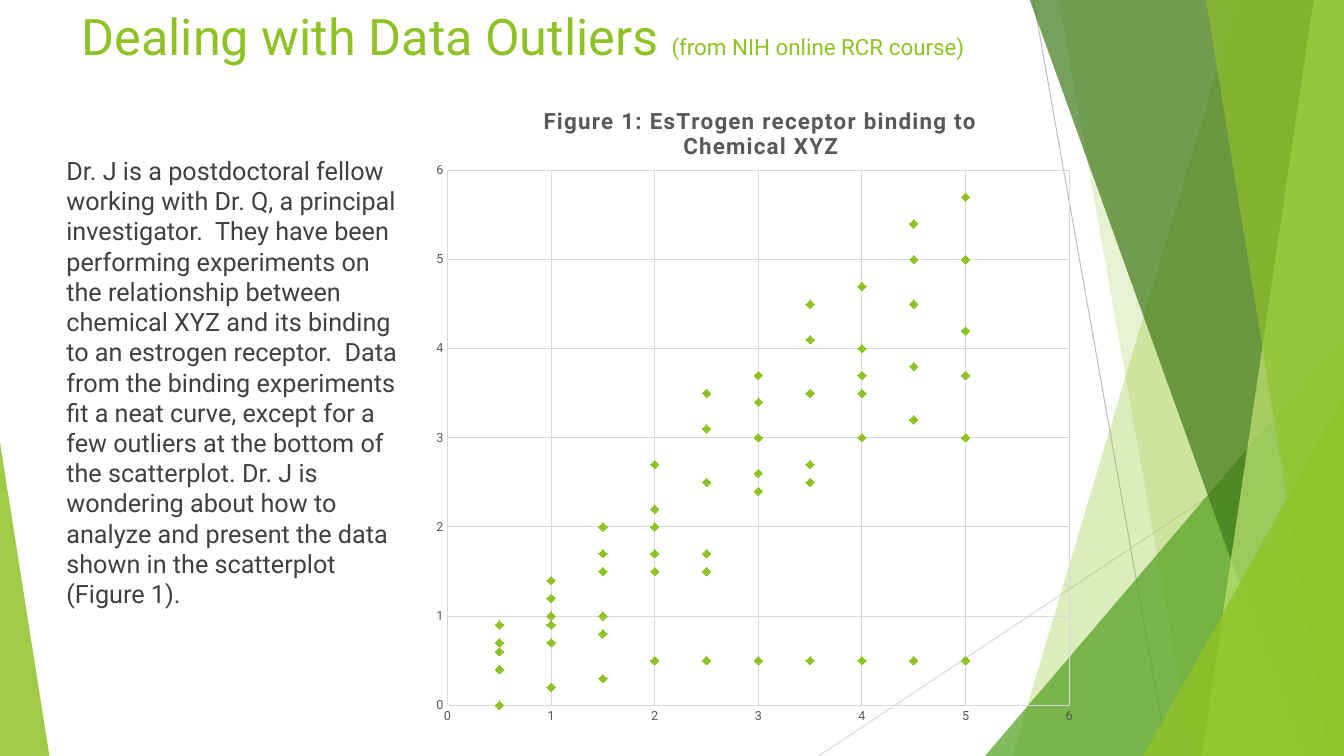
"""Build a slide on data outliers with a scatterplot and green facets."""
from dataclasses import dataclass

from lxml import etree
from pptx import Presentation
from pptx.chart.data import XyChartData
from pptx.dml.color import RGBColor
from pptx.enum.chart import XL_CHART_TYPE as ChartType
from pptx.enum.chart import XL_MARKER_STYLE as Marker
from pptx.enum.chart import XL_TICK_MARK as Tick
from pptx.enum.shapes import MSO_CONNECTOR as Connector
from pptx.enum.shapes import MSO_SHAPE as Shape
from pptx.oxml import parse_xml
from pptx.oxml.ns import nsdecls, qn
from pptx.util import Inches, Pt


@dataclass(frozen=True)
class Theme:
    font: str = "Roboto"
    green: str = "90C226"
    leaf: str = "54A021"
    forest: str = "3F7819"
    lime: str = "C0E474"
    body: str = "404040"
    label: str = "595959"
    grid: str = "D9D9D9"
    ray: str = "BFBFBF"
    title_size: int = 36
    source_size: int = 16
    body_size: int = 18
    chart_title_size: int = 16
    axis_size: int = 9


theme = Theme()
deck = Presentation()
deck.slide_width, deck.slide_height = Inches(13.33), Inches(7.5)
page = deck.slides.add_slide(deck.slide_layouts[6])


def add_span(para, text, *, size, color, bold=False):
    span = para.add_run()
    span.text = text
    span.font.name = theme.font
    span.font.size = Pt(size)
    span.font.bold = bold
    span.font.color.rgb = RGBColor.from_string(color)
    return span


def paint(shape, color, opacity):
    shape.shadow.inherit = False
    shape.fill.solid()
    shape.fill.fore_color.rgb = RGBColor.from_string(color)
    shape.line.fill.background()
    tint = shape.fill._xPr.find(".//" + qn("a:srgbClr"))
    etree.SubElement(tint, qn("a:alpha")).set("val", str(opacity * 1000))


rays = [
    (10.25, 0, 11.58, 7.5, theme.ray),
    (13.33, 4.03, 8.12, 7.5, theme.grid),
]
for x1, y1, x2, y2, color in rays:
    ray = page.shapes.add_connector(
        Connector.STRAIGHT, Inches(x1), Inches(y1), Inches(x2), Inches(y2))
    ray.line.color.rgb = RGBColor.from_string(color)
    ray.line.width = Pt(0.75)
    etree.SubElement(ray._element.spPr, qn("a:effectLst"))

bands = [
    ("band", 12.28, 10.04, theme.green, 30),
    ("band", 10.5, 11.83, theme.green, 20),
    ("triangle", (9.77, 3.33, 3.56, 4.17), 1, theme.leaf, 72),
    ("band", 10.21, 12.91, theme.forest, 70),
    ("band", 13.03, 11.92, theme.lime, 70),
    ("band", 11.96, 13.18, theme.green, 65),
    ("triangle", (11.34, 3.93, 1.99, 3.57), 1, theme.green, 80),
    ("triangle", (0, 4.39, 0.49, 3.11), 0, theme.green, 85),
]
for kind, first, second, color, opacity in bands:
    if kind == "triangle":
        facet = page.shapes.add_shape(
            Shape.ISOSCELES_TRIANGLE, *[Inches(length) for length in first])
        facet.adjustments[0] = second
    else:
        corners = [(13.33, -0.01), (13.33, 7.5), (second, 7.5)]
        outline = page.shapes.build_freeform(Inches(first), Inches(-0.01))
        outline.add_line_segments([(Inches(x), Inches(y)) for x, y in corners])
        facet = outline.convert_to_shape()
    paint(facet, color, opacity)

title_spans = [
    ("Dealing with Data Outliers ", theme.title_size, theme.green),
    ("(from NIH online RCR course)", theme.source_size, theme.green),
]
body_spans = [(
    "Dr. J is a postdoctoral fellow working with Dr. Q, a principal "
    "investigator.  They have been performing experiments on the relationship "
    "between chemical XYZ and its binding to an estrogen receptor.  Data from "
    "the binding experiments fit a neat curve, except for a few outliers at "
    "the bottom of the scatterplot. Dr. J is wondering about how to analyze "
    "and present the data shown in the scatterplot (Figure 1).",
    theme.body_size, theme.body)]
text_boxes = [
    ((0.71, 0, 11.5, 1.45), 0, title_spans),
    ((0.56, 1.49, 3.58, 4.76), 10, body_spans),
]
for place, space_before, spans in text_boxes:
    box = page.shapes.add_textbox(*[Inches(length) for length in place])
    box.text_frame.word_wrap = True
    para = box.text_frame.paragraphs[0]
    para.space_before = Pt(space_before)
    for text, size, color in spans:
        add_span(para, text, size=size, color=color)

readings = [
    (1, [1.4, 1, 1.2, 0.7, 0.9]),
    (2, [2, 2.7, 2.2, 1.5, 1.7]),
    (3, [3, 3.7, 3.4, 2.4, 2.6]),
    (4, [4, 4.7, 3.5, 3.7, 3]),
    (3, [0.5]),
    (4, [0.5]),
    (2, [0.5]),
    (1, [0.2]),
    (5, [5, 5.7, 4.2, 3.7, 0.5]),
    (0.5, [0.7, 0.4, 0.6, 0.9, 0]),
    (1.5, [1.5, 2, 1.7, 1, 0.3, 0.8]),
    (2.5, [2.5, 3.5, 3.1, 1.5, 1.7, 0.5]),
    (3.5, [3.5, 4.5, 4.1, 2.7, 2.5, 0.5]),
    (5, [3]),
    (4.5, [4.5, 0.5, 5.4, 5, 3.8, 3.2]),
]
data = XyChartData()
binding = data.add_series("Series 1")
for dose, responses in readings:
    for response in responses:
        binding.add_data_point(dose, response)

chart = page.shapes.add_chart(
    ChartType.XY_SCATTER, Inches(4.24), Inches(0.84), Inches(6.61), Inches(6.4),
    data).chart
chart.has_legend = False
chart.font.name = theme.font
chart.font.size = Pt(10)
chart.plots[0].vary_by_categories = False

chart.has_title = True
heading = add_span(
    chart.chart_title.text_frame.paragraphs[0],
    "Figure 1: EsTrogen receptor binding to Chemical XYZ",
    size=theme.chart_title_size, color=theme.label, bold=True)
heading.font._element.set("spc", "100")
chart.chart_title.include_in_layout = False

for axis in (chart.category_axis, chart.value_axis):
    axis.minimum_scale, axis.maximum_scale, axis.major_unit = 0, 6, 1
    axis.major_tick_mark = axis.minor_tick_mark = Tick.NONE
    axis.has_major_gridlines = True
    axis.tick_labels.font.name = theme.font
    axis.tick_labels.font.size = Pt(theme.axis_size)
    axis.tick_labels.font.color.rgb = RGBColor.from_string(theme.label)
    axis.tick_labels.number_format = "General"
    axis.tick_labels.number_format_is_linked = False
    for line in (axis.format.line, axis.major_gridlines.format.line):
        line.color.rgb = RGBColor.from_string(theme.grid)
        line.width = Pt(0.75)

series = chart.plots[0].series[0]
series.smooth = False
series.format.line.fill.background()
series.marker.style = Marker.DIAMOND
series.marker.size = 6
series.marker.format.fill.solid()
series.marker.format.fill.fore_color.rgb = RGBColor.from_string(theme.green)
series.marker.format.line.color.rgb = RGBColor.from_string(theme.green)

plot_area = chart._chartSpace.chart.plotArea
for old_layout in plot_area.findall(qn("c:layout")):
    plot_area.remove(old_layout)
plot_area.insert(0, parse_xml(
    f'<c:layout {nsdecls("c")}><c:manualLayout><c:layoutTarget val="inner"/>'
    '<c:xMode val="edge"/><c:yMode val="edge"/><c:x val="0.03"/>'
    '<c:y val="0.133"/><c:w val="0.933"/><c:h val="0.829"/>'
    '</c:manualLayout></c:layout>'))

deck.save("out.pptx")
